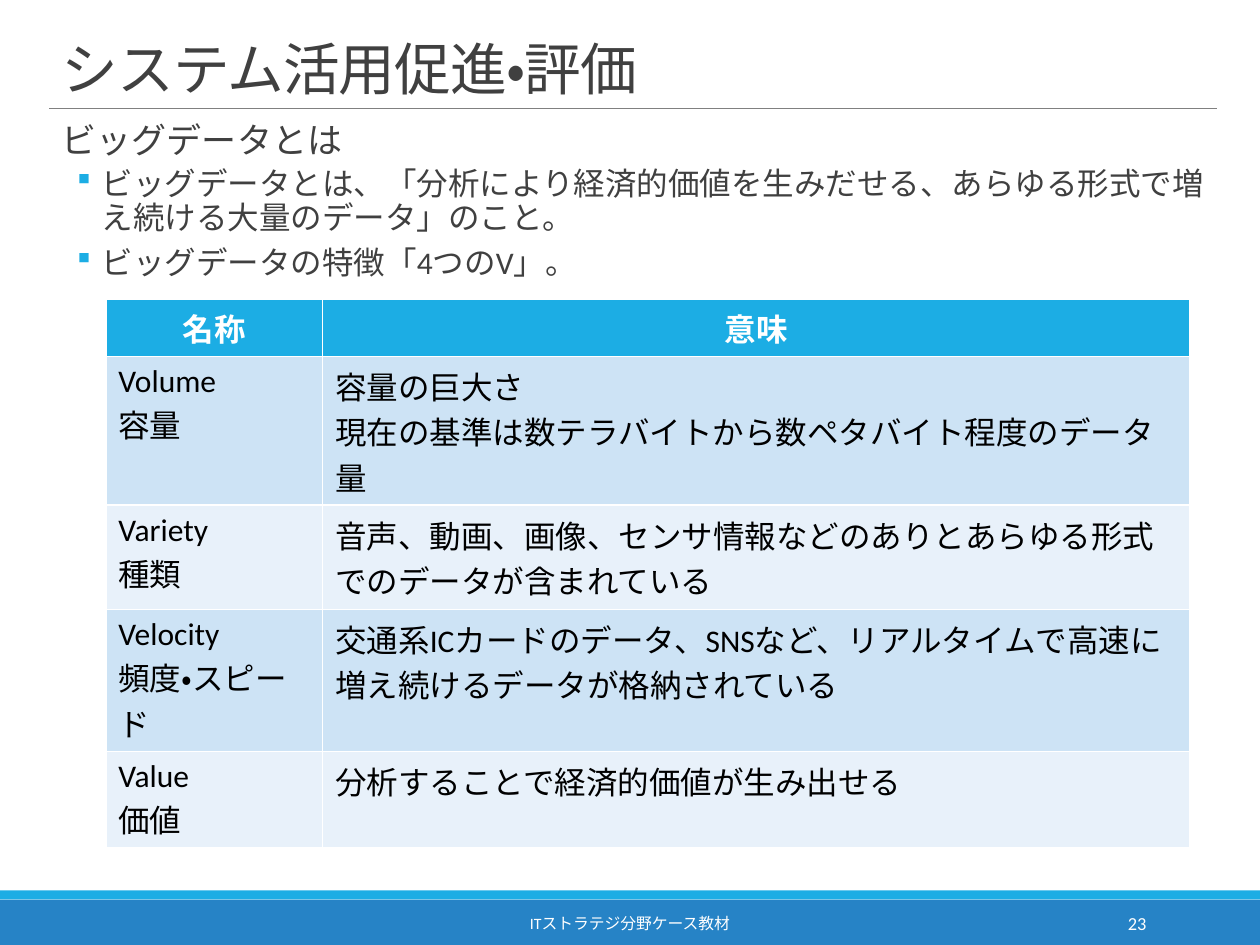
import dataclasses

import lxml.etree
import pptx
import pptx.dml.color
import pptx.enum.lang
import pptx.enum.shapes
import pptx.enum.text
import pptx.oxml.ns
import pptx.util

Pt = pptx.util.Pt
ALIGN = pptx.enum.text.PP_ALIGN
ANCHOR = pptx.enum.text.MSO_ANCHOR


@dataclasses.dataclass(frozen=True)
class Theme:
    """Colours, fonts and type sizes of the page."""
    font: str = "Calibri"
    bullet_font: str = "Wingdings"
    accent: str = "1CADE4"
    footer: str = "2683C6"
    rule: str = "808080"
    ink: str = "404040"
    black: str = "000000"
    white: str = "FFFFFF"
    bands: tuple = ("CDE3F5", "E8F1FA")
    title: float = 32.4
    heading: float = 20
    text: float = 18
    note: float = 9
    number: float = 10.5


THEME = Theme()
HEADER = ("名称", "意味")
FEATURES = (
    ("Volume\n容量", "容量の巨大さ\n現在の基準は数テラバイトから数ペタバイト程度のデータ量"),
    ("Variety\n種類", "音声、動画、画像、センサ情報などのありとあらゆる形式でのデータが含まれている"),
    ("Velocity\n頻度・スピード",
     "交通系ICカードのデータ、SNSなど、リアルタイムで高速に増え続けるデータが格納されている"),
    ("Value\n価値", "分析することで経済的価値が生み出せる"),
)
ROW_HEIGHTS = (32.8, 85, 59.6, 81.2, 55.2)
POINTS = (
    "ビッグデータとは、「分析により経済的価値を生みだせる、あらゆる形式で増え続ける大量のデータ」のこと。",
    "ビッグデータの特徴「4つのV」。",
)


def apply(target, values):
    """Set each named attribute of the target."""
    for name, value in values.items():
        setattr(target, name, value)


def rgb(value):
    """Return a colour from its hex text."""
    return pptx.dml.color.RGBColor.from_string(value)


def child(parent, tag, **attributes):
    """Append a drawing element to the parent."""
    return lxml.etree.SubElement(parent, pptx.oxml.ns.qn(tag), attributes)


def write(para, text, size, colour, bold=False, **layout):
    """Fill a paragraph with text, one span for each line."""
    apply(para, layout)
    for index, line in enumerate(text.split("\n")):
        if index:
            para.add_line_break()
        span = para.add_run()
        span.text = line
        apply(span.font, {"name": THEME.font, "size": Pt(size), "bold": bold,
                          "language_id": pptx.enum.lang.MSO_LANGUAGE_ID.JAPANESE})
        span.font.color.rgb = rgb(colour)
    return para


def add_frame(page, box, **values):
    """Add a wrapping text box and return its text frame."""
    frame = page.shapes.add_textbox(*map(Pt, box)).text_frame
    apply(frame, {"word_wrap": True, **values})
    return frame


def add_bar(page, box, colour):
    """Add a plain filled band."""
    bar = page.shapes.add_shape(pptx.enum.shapes.MSO_SHAPE.RECTANGLE, *map(Pt, box))
    bar.shadow.inherit = False
    bar.fill.solid()
    bar.fill.fore_color.rgb = rgb(colour)
    bar.line.fill.background()


def add_title(page, box, text):
    """Place the title with the rule along its lower edge."""
    left, top, width, height = box
    base = top + height
    rule = page.shapes.add_connector(
        pptx.enum.shapes.MSO_CONNECTOR.STRAIGHT,
        *map(Pt, (left, base, left + width, base)))
    rule.line.color.rgb = rgb(THEME.rule)
    rule.line.width = Pt(0.5)
    child(rule._element.spPr, "a:effectLst")
    frame = add_frame(page, box, vertical_anchor=ANCHOR.BOTTOM)
    para = write(frame.paragraphs[0], text, THEME.title, THEME.ink, line_spacing=0.85)
    for span in para.runs:
        span._r.get_or_add_rPr().set("spc", "-50")


def indent(para, margin, first):
    """Set the left margin and first-line indent of a paragraph."""
    properties = para._p.get_or_add_pPr()
    properties.set("marL", str(Pt(margin)))
    properties.set("indent", str(Pt(first)))
    return properties


def add_body(page, box, heading, points):
    """Place the heading and its square-bulleted points."""
    frame = add_frame(page, box, margin_left=0, margin_right=0)
    para = write(frame.paragraphs[0], heading, THEME.heading, THEME.ink,
                 line_spacing=0.9, space_before=Pt(12), space_after=Pt(2))
    indent(para, 7.2, 0)
    for point in points:
        para = write(frame.add_paragraph(), point, THEME.text, THEME.ink, level=1,
                     line_spacing=0.9, space_before=Pt(2), space_after=Pt(4))
        properties = indent(para, 30.2, -14.4)
        child(child(properties, "a:buClr"), "a:srgbClr", val=THEME.accent)
        child(properties, "a:buFont", typeface=THEME.bullet_font, charset="2")
        child(properties, "a:buChar", char="§")


def add_features(page, box, header, rows, heights):
    """Place the table of features, with a fifth of its width for names."""
    table = page.shapes.add_table(len(rows) + 1, len(header), *map(Pt, box)).table
    for column, share in zip(table.columns, (0.2, 0.8)):
        column.width = Pt(box[2] * share)
    for index, texts in enumerate((header, *rows)):
        table.rows[index].height = Pt(heights[index])
        for column, text in enumerate(texts):
            cell = table.cell(index, column)
            para = cell.text_frame.paragraphs[0]
            cell.fill.solid()
            if index:
                cell.fill.fore_color.rgb = rgb(THEME.bands[(index - 1) % 2])
                write(para, text, THEME.text, THEME.black)
            else:
                cell.fill.fore_color.rgb = rgb(THEME.accent)
                write(para, text, THEME.text, THEME.white, True, alignment=ALIGN.CENTER)


def add_footer(page, box, note, number):
    """Place the two footer bands, the note and the page number."""
    left, top, width, height = box
    strip = 5.2
    add_bar(page, (left, top + strip, width, height - strip), THEME.footer)
    add_bar(page, (left, top, width, strip), THEME.accent)
    entries = (
        (217.4, 285.1, note, THEME.note, ALIGN.CENTER),
        (584.4, 77.8, number, THEME.number, ALIGN.RIGHT),
    )
    for offset, entry_width, text, size, alignment in entries:
        frame = add_frame(page, (left + offset, top + 8.7, entry_width, 20.2),
                          vertical_anchor=ANCHOR.MIDDLE)
        write(frame.paragraphs[0], text, size, THEME.white, alignment=alignment)


def main():
    """Build the page and save the deck."""
    deck = pptx.Presentation()
    apply(deck, {"slide_width": Pt(720), "slide_height": Pt(540)})
    page = deck.slides.add_slide(deck.slide_layouts[6])
    add_footer(page, (0, 508.8, 720, 31.2), "ITストラテジ分野ケース教材", "23")
    add_title(page, (28.1, 22.3, 667.6, 39.6), "システム活用促進・評価")
    add_body(page, (28.1, 67, 667.6, 438.5), "ビッグデータとは", POINTS)
    add_features(page, (60.5, 170.9, 619.6, sum(ROW_HEIGHTS)), HEADER, FEATURES, ROW_HEIGHTS)
    deck.save("out.pptx")


if __name__ == "__main__":
    main()
